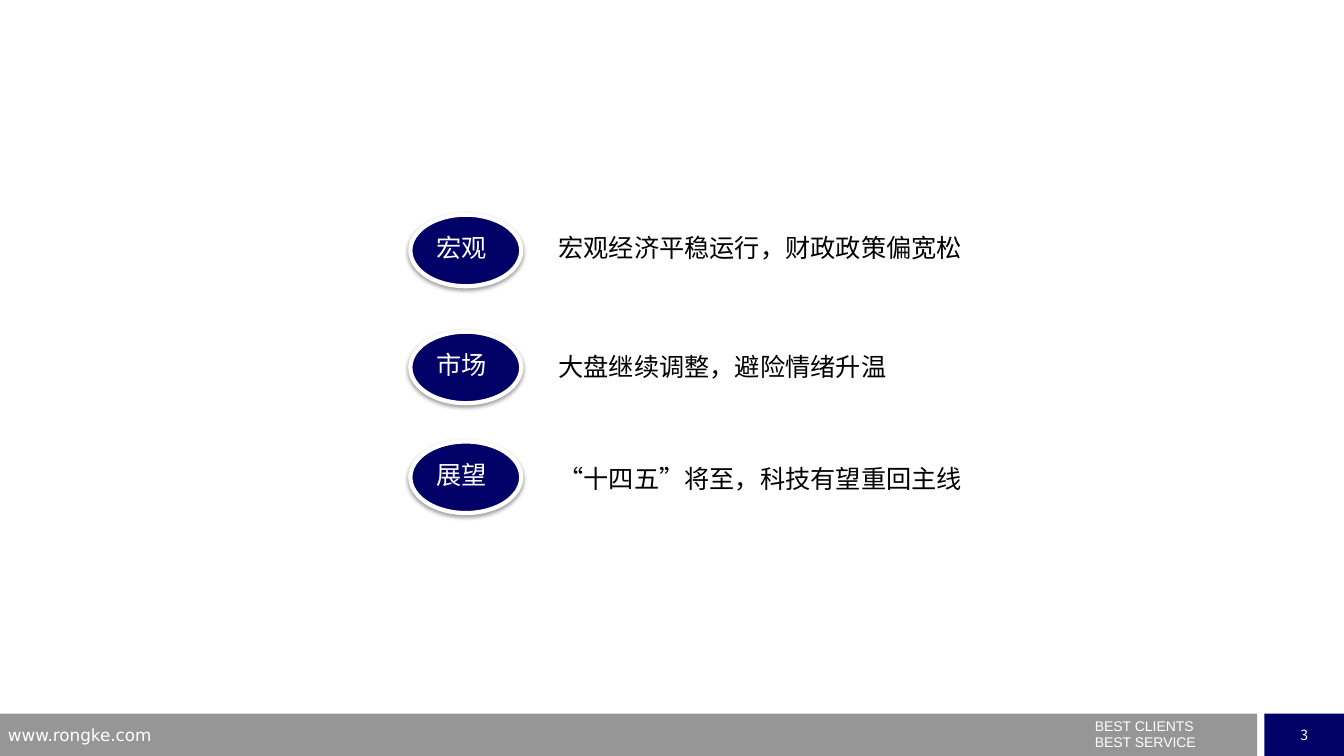
from collections import namedtuple

from lxml import etree
from pptx import Presentation
from pptx.dml.color import RGBColor
from pptx.enum.shapes import MSO_SHAPE as Shape
from pptx.enum.text import MSO_ANCHOR as Anchor, PP_ALIGN as Align
from pptx.oxml import parse_xml
from pptx.oxml.ns import nsdecls, qn
from pptx.util import Inches, Pt

Box = namedtuple("Box", "left top width height")

COLOURS = {"navy": "000066", "grey": "969696", "white": "FFFFFF", "black": "000000"}
CJK_FONT = "Noto Sans CJK SC"
SLIDE_WIDTH, SLIDE_HEIGHT = 13.33, 7.5

TOPICS = [
    ("宏观", "宏观经济平稳运行，财政政策偏宽松", 0, 0.18),
    ("市场", "大盘继续调整，避险情绪升温", 1.16, 0.2),
    ("展望", "“十四五”将至，科技有望重回主线", 2.25, 0.22),
]


def colour(name):
    return RGBColor.from_string(COLOURS[name])


def inches(box):
    return [Inches(length) for length in box]


def add_panel(page, kind, box, fill):
    panel = page.shapes.add_shape(kind, *inches(box))
    panel.shadow.inherit = False
    panel.fill.solid()
    panel.fill.fore_color.rgb = colour(fill)
    panel.line.fill.background()
    return panel


def add_span(para, text, size, font, ink):
    span = para.add_run()
    span.text = text
    span.font.size = Pt(size)
    span.font.name = font
    span.font.color.rgb = colour(ink)
    east_asian = etree.SubElement(span.font._element, qn("a:ea"))
    east_asian.set("typeface", font)


def add_text(page, box, lines, size, font, ink, padded=True):
    frame = page.shapes.add_textbox(*inches(box)).text_frame
    frame.word_wrap = True
    if not padded:
        frame.margin_left = frame.margin_right = 0
        frame.margin_top = frame.margin_bottom = 0
    for index, line in enumerate(lines):
        para = frame.add_paragraph() if index else frame.paragraphs[0]
        add_span(para, line, size, font, ink)
    return frame


def add_drop_shadow(shape):
    effects = shape._element.spPr.find(qn("a:effectLst"))
    effects.append(parse_xml(
        f'<a:outerShdw {nsdecls("a")} blurRad="{Pt(3.1)}" dist="{Pt(1.6)}" '
        f'dir="5400000" rotWithShape="0"><a:srgbClr val="{COLOURS["black"]}">'
        '<a:alpha val="38000"/></a:srgbClr></a:outerShdw>'))


def add_footer(page, box, number):
    number_width = 0.79
    number_left = box.left + box.width - number_width
    bar_width = number_left - 0.07 - box.left
    add_panel(page, Shape.RECTANGLE, box._replace(width=bar_width), "grey")

    number_box = box._replace(left=number_left, width=number_width)
    frame = add_panel(page, Shape.RECTANGLE, number_box, "navy").text_frame
    frame.word_wrap = False
    frame.vertical_anchor = Anchor.MIDDLE
    para = frame.paragraphs[0]
    para.alignment = Align.CENTER
    add_span(para, number, 10, CJK_FONT, "white")

    text_top = box.top + 0.06
    motto_box = Box(box.left + 10.76, text_top, 2, 0.36)
    motto = add_text(page, motto_box, ["BEST CLIENTS", "BEST SERVICE"], 10, "Arial", "white")
    for para in motto.paragraphs:
        para.line_spacing = 0.5
    motto.paragraphs[1].space_before = Pt(5.6)

    site_box = Box(box.left - 0.02, text_top, 3.22, 0.26)
    add_text(page, site_box, ["www.rongke.com"], 12, "DejaVu Sans", "white")


def add_topic(page, box, label, sentence, sentence_drop):
    badge_box = box._replace(width=1.1)
    badge = add_panel(page, Shape.OVAL, badge_box, "navy")
    badge.line.color.rgb = colour("white")
    badge.line.width = Pt(3)
    add_drop_shadow(badge)

    label_box = Box(box.left + 0.16, box.top + 0.13, 0.79, 0.4)
    add_text(page, label_box, [label], 18, CJK_FONT, "white")

    indent = 1.47
    sentence_box = Box(box.left + indent, box.top + sentence_drop, box.width - indent, 0.3)
    add_text(page, sentence_box, [sentence], 18, CJK_FONT, "black", padded=False)


def add_agenda(page, box):
    for label, sentence, offset, sentence_drop in TOPICS:
        topic_box = box._replace(top=box.top + offset, height=0.71)
        add_topic(page, topic_box, label, sentence, sentence_drop)


def main():
    deck = Presentation()
    deck.slide_width, deck.slide_height = Inches(SLIDE_WIDTH), Inches(SLIDE_HEIGHT)
    page = deck.slides.add_slide(deck.slide_layouts[6])
    footer_height = 0.42
    add_footer(page, Box(0, SLIDE_HEIGHT - footer_height, SLIDE_WIDTH, footer_height), "3")
    add_agenda(page, Box(4.07, 2.13, 5.64, 2.96))
    deck.save("out.pptx")


if __name__ == "__main__":
    main()
